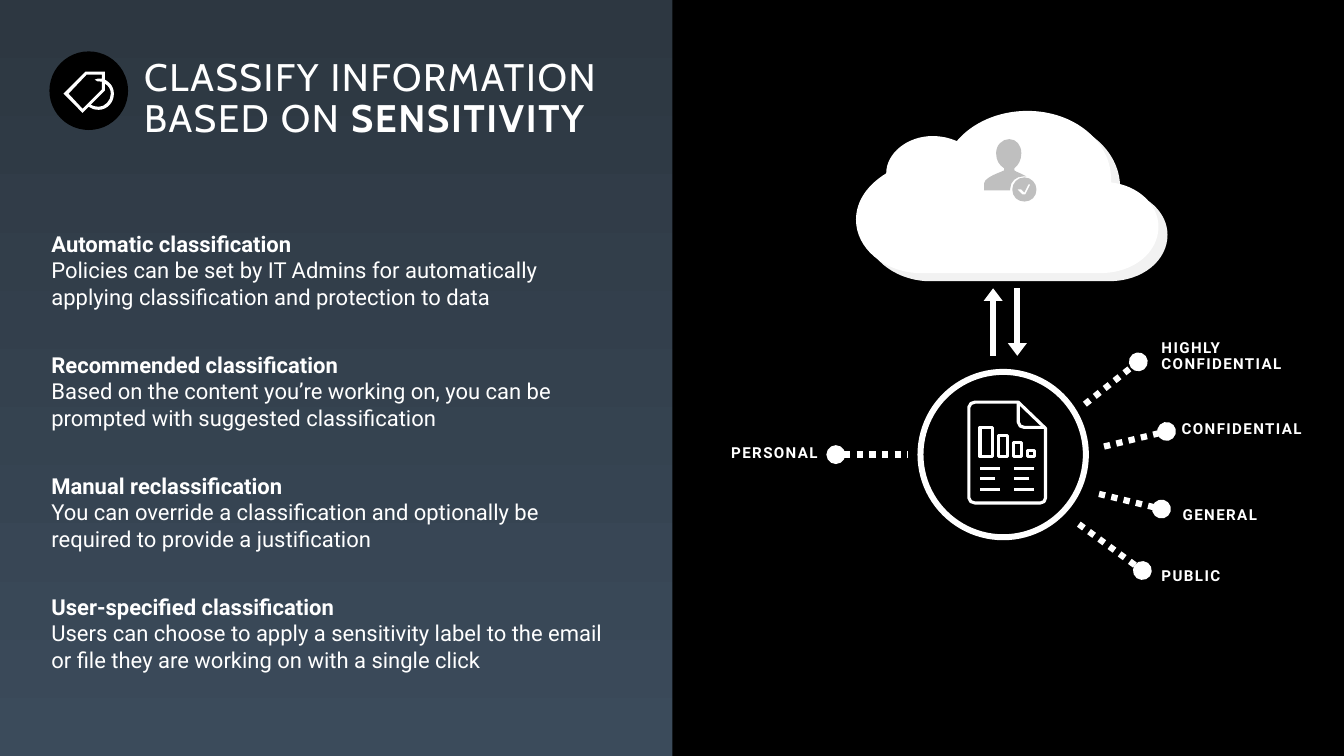
from lxml import etree
from pptx import Presentation
from pptx import util as u
from pptx.dml.color import RGBColor
from pptx.enum import dml, shapes, text
from pptx.oxml import ns

Inches, Pt = u.Inches, u.Pt
COLORS = {"white": "FFFFFF", "black": "000000", "shade": "F2F2F2", "gray": "BFBFBF",
          "top": "2D3741", "bottom": "3B4B5B"}
RIGHT_EDGE = 13.32

# Outlines: a start point, then points (2 numbers) or Bezier curves (6 numbers).
TAG = [
    [(1.04, .79), (1.06, .8, 1.13, .84, 1.13, .93), (1.13, 1.02, 1.06, 1.09, .98, 1.09),
     (.94, 1.09, .91, 1.08, .88, 1.06), (.82, 1.12), (.63, .93), (.85, .71), (1.04, .71)],
    [(.82, 1.08), (1.01, .89), (1.01, .81), (.98, .81, .95, .81, .94, .79),
     (.95, .78, .98, .78, 1.01, .78), (1.01, .74), (.86, .74), (.68, .93)],
    [(.98, 1.06), (1.04, 1.06, 1.1, 1, 1.1, .93), (1.1, .89, 1.08, .85, 1.04, .83),
     (1.04, .9), (.9, 1.04), (.92, 1.05, .95, 1.06, .98, 1.06)],
]
PAGE = [[(9.67, 3.99), (9.64, 3.99, 9.61, 4.01, 9.61, 4.04), (9.61, 4.94),
         (9.61, 4.97, 9.64, 4.99, 9.67, 4.99), (10.32, 4.99),
         (10.35, 4.99, 10.37, 4.97, 10.37, 4.94), (10.37, 4.25), (10.1, 3.99)]]
FOLD = [[(10.36, 4.24), (10.16, 4.24), (10.13, 4.24, 10.1, 4.22, 10.1, 4.19), (10.1, 3.99)]]
CLOUD = [[(11.02, 1.81), (11.02, 1.8, 11.02, 1.79, 11.02, 1.78),
          (11.02, 1.4, 10.65, 1.1, 10.19, 1.1), (9.9, 1.1, 9.64, 1.22, 9.49, 1.4),
          (9.42, 1.37, 9.34, 1.35, 9.25, 1.35), (9, 1.35, 8.79, 1.52, 8.79, 1.72),
          (8.61, 1.83, 8.49, 1.99, 8.49, 2.18), (8.49, 2.46, 8.76, 2.69, 9.1, 2.71),
          (10.91, 2.71), (11.25, 2.71, 11.49, 2.5, 11.49, 2.25),
          (11.49, 2.03, 11.29, 1.84, 11.02, 1.81)]]
BADGE = [
    [(10.16, 1.76), (10.09, 1.76, 10.04, 1.82, 10.04, 1.88), (10.04, 1.95, 10.09, 2, 10.16, 2),
     (10.23, 2, 10.28, 1.95, 10.28, 1.88), (10.28, 1.82, 10.23, 1.76, 10.16, 1.76)],
    [(10.14, 1.93), (10.09, 1.88), (10.13, 1.88), (10.16, 1.91), (10.2, 1.83),
     (10.22, 1.83), (10.17, 1.93)],
]
PERSON = [[(10.02, 1.89), (10.02, 1.87), (10.02, 1.8, 10.08, 1.75, 10.15, 1.75), (10.18, 1.75),
           (10.12, 1.72), (10.07, 1.7, 10.06, 1.69, 10.06, 1.69), (10.06, 1.67),
           (10.1, 1.64, 10.13, 1.59, 10.13, 1.52), (10.13, 1.44, 10.08, 1.38, 10.01, 1.38),
           (9.94, 1.38, 9.88, 1.44, 9.88, 1.52), (9.88, 1.59, 9.91, 1.64, 9.96, 1.67),
           (9.96, 1.69), (9.96, 1.69, 9.94, 1.7, 9.89, 1.72),
           (9.84, 1.74, 9.76, 1.78, 9.76, 1.82), (9.76, 1.89)]]

SECTIONS = [
    ("Automatic classification",
     "Policies can be set by IT Admins for automatically applying classification and "
     "protection to data"),
    ("Recommended classification",
     "Based on the content you’re working on, you can be prompted with suggested classification"),
    ("Manual reclassification",
     "You can override a classification and optionally be required to provide a justification"),
    ("User-specified classification",
     "Users can choose to apply a sensitivity label to the email or file they are working on "
     "with a single click"),
]
# label, left, top, line spacing, start and end of its dotted line
LEVELS = [
    ("HIGHLY CONFIDENTIAL", 11.52, 3.33, .9, (10.76, 4.01), (11.29, 3.59)),
    ("CONFIDENTIAL", 11.72, 4.05, 1, (10.95, 4.43), (11.57, 4.28)),
    ("GENERAL", 11.73, 4.9, 1, (10.9, 4.9), (11.52, 5.05)),
    ("PUBLIC", 11.52, 5.5, 1, (10.7, 5.2), (11.33, 5.66)),
]


def rgb(name):
    return RGBColor.from_string(COLORS[name])


def paint(shape, fill=None, line_width=None):
    shape.shadow.inherit = False
    if fill:
        shape.fill.solid()
        shape.fill.fore_color.rgb = rgb(fill)
    else:
        shape.fill.background()
    if line_width:
        shape.line.color.rgb = rgb("white")
        shape.line.width = Pt(line_width)
    else:
        shape.line.fill.background()


def add_preset(slide, kind, left, top, width, height, **style):
    shape = slide.shapes.add_shape(kind, Inches(left), Inches(top), Inches(width), Inches(height))
    paint(shape, **style)
    return shape


def bend(segment, curve, shape, shift):
    """Turn a straight segment of a freeform into a Bezier curve."""
    segment.tag = ns.qn("a:cubicBezTo")
    segment.clear()
    for x, y in zip(curve[::2], curve[1::2]):
        etree.SubElement(segment, ns.qn("a:pt"), x=str(Inches(x + shift[0]) - shape.left),
                         y=str(Inches(y + shift[1]) - shape.top))


def add_outline(slide, contours, shift=(0, 0), close=True, **style):
    builder = None
    for contour in contours:
        points = [(Inches(part[-2] + shift[0]), Inches(part[-1] + shift[1])) for part in contour]
        if builder is None:
            builder = slide.shapes.build_freeform(*points[0])
        else:
            builder.move_to(*points[0])
        builder.add_line_segments(points[1:], close=False)
    shape = builder.convert_to_shape()
    parts = [part for contour in contours for part in contour]
    outline = shape._element.find(".//" + ns.qn("a:path"))
    for segment, part in zip(list(outline), parts):
        if len(part) == 6:
            tail = etree.Element(ns.qn("a:cubicBezTo"))
            outline.replace(segment, tail)
            bend(tail, part, shape, shift)
    if close:
        for start in outline.findall(ns.qn("a:moveTo"))[1:]:
            start.addprevious(etree.Element(ns.qn("a:close")))
        etree.SubElement(outline, ns.qn("a:close"))
    paint(shape, **style)


def add_line(slide, start, end, width, dotted=False, **tips):
    """Draw a line; tips maps headEnd or tailEnd to an arrowhead type."""
    line = slide.shapes.add_connector(shapes.MSO_CONNECTOR.STRAIGHT,
                                      *(Inches(value) for value in start + end))
    line.line.color.rgb = rgb("white")
    line.line.width = Pt(width)
    if dotted:
        line.line.dash_style = dml.MSO_LINE.ROUND_DOT
    for tag, kind in tips.items():
        tip = etree.SubElement(line.line._get_or_add_ln(), ns.qn("a:" + tag), type=kind)
        if kind == "triangle":
            tip.set("len", "sm")
    etree.SubElement(line._element.spPr, ns.qn("a:effectLst"))


def set_frame(shape, margins):
    frame = shape.text_frame
    frame.word_wrap = True
    frame.auto_size = text.MSO_AUTO_SIZE.NONE
    frame.vertical_anchor = text.MSO_ANCHOR.MIDDLE
    (frame.margin_left, frame.margin_top,
     frame.margin_right, frame.margin_bottom) = (Inches(value) for value in margins)
    return frame


def add_run(paragraph, words, size, font="Roboto", bold=False, spacing=0):
    run = paragraph.add_run()
    run.text = words
    run.font.name, run.font.size, run.font.bold = font, Pt(size), bold
    run.font.color.rgb = rgb("white")
    if spacing:
        run._r.get_or_add_rPr().set("spc", str(round(spacing * 100)))


def add_text_box(slide, left, top, width, height):
    box = slide.shapes.add_textbox(Inches(left), Inches(top), Inches(width), Inches(height))
    return set_frame(box, (0, .05, .1, .05))


def add_label(slide, words, left, top, width, height=.41, line_spacing=1.0,
              align=text.PP_ALIGN.LEFT):
    paragraph = add_text_box(slide, left, top, width, height).paragraphs[0]
    paragraph.alignment = align
    paragraph.line_spacing = float(line_spacing)
    add_run(paragraph, words, 10.8, bold=True, spacing=1)


def set_title(slide):
    title = slide.shapes.title
    title.left, title.top, title.width, title.height = map(Inches, (1.27, .52, 5.59, .94))
    paragraph = set_frame(title, (.16, .1, 0, .1)).paragraphs[0]
    paragraph.alignment = text.PP_ALIGN.LEFT
    paragraph.line_spacing = .9
    add_run(paragraph, "CLASSIFY INFORMATION BASED ON ", 27.4, "Cabin", spacing=1.23)
    add_run(paragraph, "SENSITIVITY", 27.4, "Cabin", bold=True, spacing=1.23)


def add_sections(slide):
    for index, (heading, body) in enumerate(SECTIONS):
        frame = add_text_box(slide, .51, 2.18 + 1.2 * index, 5.63, 1)
        add_run(frame.paragraphs[0], heading, 15.7, bold=True)
        add_run(frame.add_paragraph(), body, 15.7)


def add_document(slide):
    add_outline(slide, PAGE, line_width=2.25)
    add_outline(slide, FOLD, close=False, line_width=2.25)
    for left, width, height in ((9.72, .12, .29), (9.9, .09, .21),
                                (10.05, .08, .14), (10.19, .07, .06)):
        add_preset(slide, shapes.MSO_SHAPE.RECTANGLE, left, 4.53 - height, width, height,
                   line_width=2.25)
    for left in (9.72, 10.06):
        for top, width in ((4.65, .2), (4.75, .15), (4.86, .2)):
            add_line(slide, (left + width, top), (left, top), 2.25)
    ring = add_preset(slide, shapes.MSO_SHAPE.DONUT, 9.1, 3.66, 1.7, 1.7, fill="white")
    ring.adjustments[0] = .035


def add_cloud(slide):
    add_outline(slide, CLOUD, shift=(.09, .08), fill="shade")
    for outline, fill in ((CLOUD, "white"), (BADGE, "gray"), (PERSON, "gray")):
        add_outline(slide, outline, fill=fill)
    add_line(slide, (10.09, 2.86), (10.09, 3.53), 4.5, tailEnd="triangle")
    add_line(slide, (9.85, 3.53), (9.85, 2.86), 4.5, tailEnd="triangle")


def add_levels(slide):
    for words, left, top, line_spacing, start, end in LEVELS:
        add_line(slide, start, end, 4.5, dotted=True, tailEnd="oval")
        add_label(slide, words, left, top, RIGHT_EDGE - left, line_spacing=line_spacing)
    add_line(slide, (8.29, 4.51), (9, 4.51), 4.5, dotted=True, headEnd="oval")
    add_label(slide, "PERSONAL", 6.98, 4.26, 1.23, height=.46, align=text.PP_ALIGN.RIGHT)


def main():
    presentation = Presentation()
    presentation.slide_width, presentation.slide_height = Inches(13.33), Inches(7.5)
    slide = presentation.slides.add_slide(presentation.slide_layouts[5])
    background = slide.background.fill
    background.gradient()
    background.gradient_angle = 270
    for stop, name in zip(background.gradient_stops, ("top", "bottom")):
        stop.color.rgb = rgb(name)
    set_title(slide)
    add_preset(slide, shapes.MSO_SHAPE.OVAL, .49, .51, .78, .78, fill="black")
    add_outline(slide, TAG, fill="white")
    add_sections(slide)
    add_preset(slide, shapes.MSO_SHAPE.RECTANGLE, 6.67, 0, 6.66, 7.5, fill="black")
    add_document(slide)
    add_cloud(slide)
    add_levels(slide)
    presentation.save("out.pptx")


if __name__ == "__main__":
    main()
